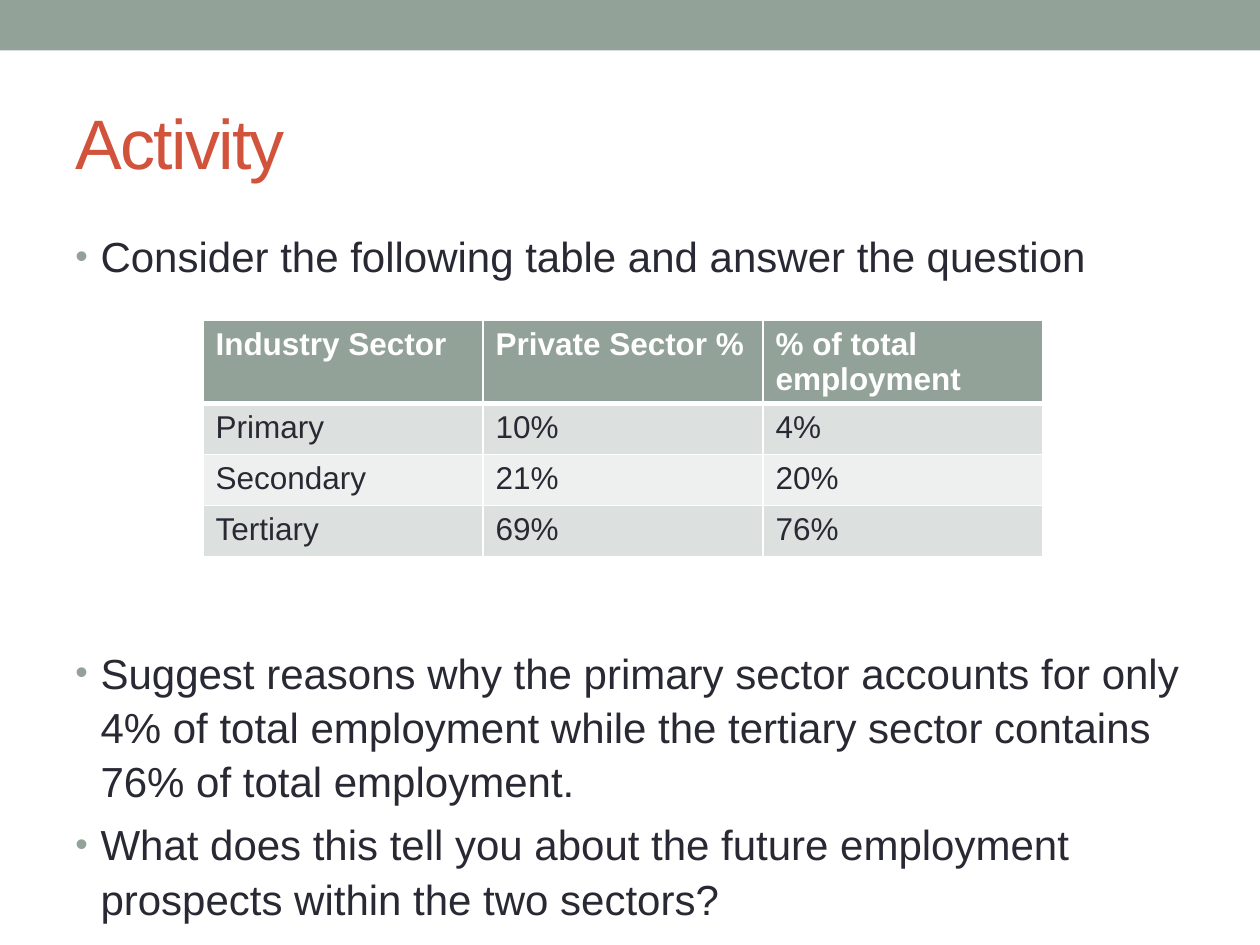
from dataclasses import dataclass

from lxml.etree import SubElement
from pptx import Presentation
from pptx.dml.color import RGBColor as Rgb
from pptx.enum.shapes import MSO_SHAPE as Shape
from pptx.enum.text import MSO_ANCHOR as Anchor, MSO_AUTO_SIZE as AutoSize, PP_ALIGN as Align
from pptx.oxml.ns import qn
from pptx.util import Pt


@dataclass(frozen=True)
class Theme:
    font: str = "Arial"
    sage: str = "93A299"
    red: str = "D2533C"
    ink: str = "292934"
    white: str = "FFFFFF"
    dark_band: str = "DCE0DE"
    light_band: str = "EEF0EF"
    title_size: int = 40
    body_size: int = 24
    table_size: int = 18


theme = Theme()


def write(para, text, *, size, color, bold=False, tracking=None, bullet=None,
          before=0, spacing=None):
    para.alignment = Align.LEFT
    para.space_before = Pt(before)
    if spacing:
        para.line_spacing = spacing
    if bullet:
        props = para._p.get_or_add_pPr()
        props.set("marL", str(Pt(14.4)))
        props.set("indent", str(Pt(-14.4)))
        SubElement(SubElement(props, qn("a:buClr")), qn("a:srgbClr"), val=bullet)
        SubElement(props, qn("a:buSzPct"), val="85000")
        SubElement(props, qn("a:buFont"), typeface=theme.font)
        SubElement(props, qn("a:buChar"), char="•")
    span = para.add_run()
    span.text = text
    span.font.name = theme.font
    span.font.size = Pt(size)
    span.font.bold = bold
    span.font.color.rgb = Rgb.from_string(color)
    if tracking:
        span._r.get_or_add_rPr().set("spc", str(tracking))


def add_border(cell, side, width):
    line = SubElement(cell._tc.get_or_add_tcPr(), qn(f"a:{side}"), w=str(Pt(width)))
    SubElement(SubElement(line, qn("a:solidFill")), qn("a:srgbClr"), val=theme.white)


deck = Presentation()
deck.slide_width, deck.slide_height = Pt(720), Pt(540)
page = deck.slides.add_slide(deck.slide_layouts[5])

band = page.shapes.add_shape(Shape.RECTANGLE, 0, 0, Pt(720), Pt(28.8))
band.shadow.inherit = False
band.fill.solid()
band.fill.fore_color.rgb = Rgb.from_string(theme.sage)
band.line.fill.background()

title = page.shapes.title
title.left, title.top, title.width, title.height = Pt(36), Pt(42), Pt(648), Pt(78)
title.text_frame.vertical_anchor = Anchor.MIDDLE
title.text_frame.auto_size = AutoSize.NONE
write(title.text_frame.paragraphs[0], "Activity", size=theme.title_size,
      color=theme.red, tracking=-100)

body = page.shapes.add_textbox(Pt(36), Pt(126), Pt(648), Pt(384)).text_frame
body.word_wrap = True
body.auto_size = AutoSize.NONE
bullets = [
    ("Consider the following table and answer the question", 0),
    ("Suggest reasons why the primary sector accounts for only 4% of total employment "
     "while the tertiary sector contains 76% of total employment.", 206.8),
    ("What does this tell you about the future employment prospects within the two sectors?",
     4.8),
]
for index, (text, gap) in enumerate(bullets):
    para = body.add_paragraph() if index else body.paragraphs[0]
    write(para, text, size=theme.body_size, color=theme.ink, bullet=theme.sage,
          before=gap, spacing=1.08)

sectors = [
    ("Industry Sector", "Private Sector %", "% of total employment"),
    ("Primary", "10%", "4%"),
    ("Secondary", "21%", "20%"),
    ("Tertiary", "69%", "76%"),
]
table = page.shapes.add_table(len(sectors), len(sectors[0]), Pt(116), Pt(183),
                              Pt(480), Pt(135)).table
for column in table.columns:
    column.width = Pt(160)
for row_index, values in enumerate(sectors):
    header = row_index == 0
    table.rows[row_index].height = Pt(47.4 if header else 29.2)
    banding = theme.dark_band if row_index % 2 else theme.light_band
    for column_index, value in enumerate(values):
        cell = table.cell(row_index, column_index)
        for side in ("lnL", "lnR", "lnT", "lnB"):
            thick = (row_index, side) in ((0, "lnB"), (1, "lnT"))
            add_border(cell, side, 3 if thick else 1)
        cell.fill.solid()
        cell.fill.fore_color.rgb = Rgb.from_string(theme.sage if header else banding)
        write(cell.text_frame.paragraphs[0], value, size=theme.table_size,
              color=theme.white if header else theme.ink, bold=header)

deck.save("out.pptx")
